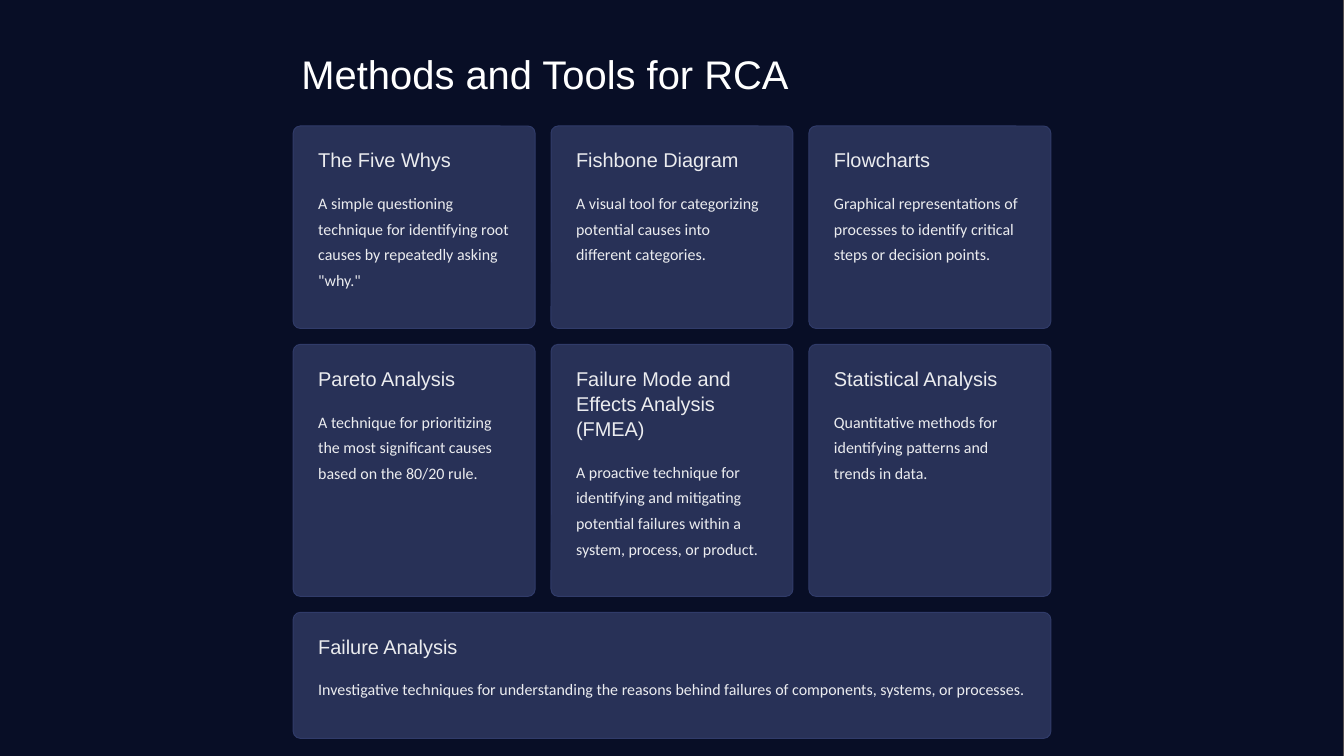
from pptx import Presentation
from pptx.dml.color import RGBColor as Rgb
from pptx.enum.shapes import MSO_SHAPE as Kind
from pptx.enum.text import MSO_ANCHOR as Anchor, PP_ALIGN as Align
from pptx.util import Inches, Pt

NAVY = Rgb(0x08, 0x0E, 0x26)
GRAY = Rgb(0x56, 0x51, 0x51)
CARD = Rgb(0x28, 0x31, 0x57)
EDGE = Rgb(0x30, 0x3B, 0x69)
WHITE = Rgb(0xFF, 0xFF, 0xFF)
PALE = Rgb(0xEB, 0xEC, 0xEF)

TITLE = "Methods and Tools for RCA"
ROWS = [
    (2.41, [
        ("The Five Whys", 1, "A simple questioning technique for identifying root causes by repeatedly asking \"why.\""),
        ("Fishbone Diagram", 1, "A visual tool for categorizing potential causes into different categories."),
        ("Flowcharts", 1, "Graphical representations of processes to identify critical steps or decision points."),
    ]),
    (3, [
        ("Pareto Analysis", 1, "A technique for prioritizing the most significant causes based on the 80/20 rule."),
        ("Failure Mode and Effects Analysis (FMEA)", 3, "A proactive technique for identifying and mitigating potential failures within a system, process, or product."),
        ("Statistical Analysis", 1, "Quantitative methods for identifying patterns and trends in data."),
    ]),
    (1.5, [
        ("Failure Analysis", 1, "Investigative techniques for understanding the reasons behind failures of components, systems, or processes."),
    ]),
]

HEAD = {"name": "Arial", "size": Pt(34.2), "color": WHITE, "lead": Pt(42.7)}
NAME = {"name": "Arial", "size": Pt(17.1), "color": PALE, "lead": Pt(21.4)}
BODY = {"name": "Calibri", "size": Pt(13.7), "color": PALE, "lead": Pt(21.9)}

WIDE, HIGH = 16, 9
LEFT, TOP, SPAN = 3.49, 1.5, 9.02
GAP, PAD, ROUND = 0.19, 0.2, 0.085
LINE, STEP = 0.3, 0.48

deck = Presentation()
deck.slide_width, deck.slide_height = Inches(WIDE), Inches(HIGH)
slide = deck.slides.add_slide(deck.slide_layouts[6])


def panel(kind, box, fill, edge):
    shape = slide.shapes.add_shape(kind, *map(Inches, box))
    shape.shadow.inherit = False
    shape.fill.solid()
    shape.fill.fore_color.rgb = fill
    shape.line.color.rgb = edge
    shape.line.width = Pt(0.85)
    return shape


def label(text, box, form, wrap=True):
    frame = slide.shapes.add_textbox(*map(Inches, box)).text_frame
    frame.word_wrap = wrap
    frame.vertical_anchor = Anchor.TOP
    para = frame.paragraphs[0]
    para.alignment = Align.LEFT
    para.line_spacing = form["lead"]
    run = para.add_run()
    run.text = text
    for key in ("name", "size"):
        setattr(run.font, key, form[key])
    run.font.color.rgb = form["color"]


panel(Kind.RECTANGLE, (0, 0, WIDE, HIGH + 0.3), NAVY, GRAY)
label(TITLE, (LEFT, 0.52, 6.19, 0.59), HEAD, False)

y = TOP
for high, cards in ROWS:
    count = len(cards)
    wide = (SPAN - GAP * (count - 1)) / count
    for col, (name, lines, text) in enumerate(cards):
        x = LEFT + col * (wide + GAP)
        card = panel(Kind.ROUNDED_RECTANGLE, (x, y, wide, high), CARD, EDGE)
        card.adjustments[0] = ROUND / min(wide, high)
        left, top, room = x + PAD, y + PAD, wide - 2 * PAD
        label(name, (left, top, room, LINE * lines), NAME, lines > 1)
        down = STEP + LINE * (lines - 1)
        label(text, (left, top + down, room, high - 2 * PAD - down), BODY)
    y += high + GAP

deck.save("out.pptx")
